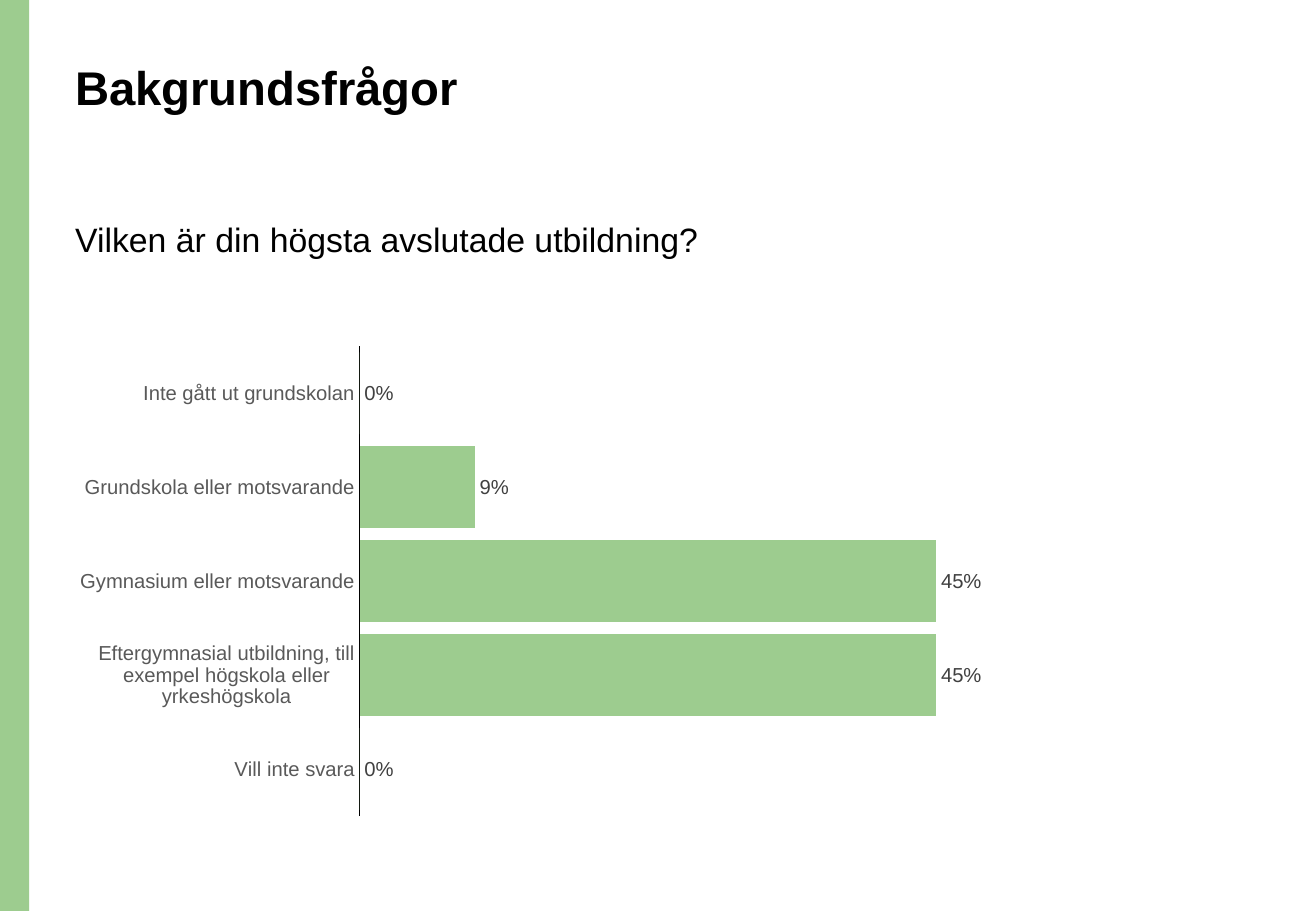
from lxml import etree
from pptx import Presentation
from pptx.chart.data import CategoryChartData
from pptx.dml.color import RGBColor
from pptx.enum.chart import XL_CHART_TYPE, XL_LABEL_POSITION, XL_TICK_MARK
from pptx.enum.shapes import MSO_SHAPE
from pptx.enum.text import MSO_ANCHOR
from pptx.oxml.ns import qn
from pptx.util import Inches, Pt

BAR_CLUSTERED = XL_CHART_TYPE.BAR_CLUSTERED
OUTSIDE_END = XL_LABEL_POSITION.OUTSIDE_END
NO_TICK = XL_TICK_MARK.NONE
RECTANGLE = MSO_SHAPE.RECTANGLE
TOP = MSO_ANCHOR.TOP

GREEN = RGBColor(0x9D, 0xCC, 0x8F)
BLACK = RGBColor(0x00, 0x00, 0x00)
GREY = RGBColor(0x59, 0x59, 0x59)
DARK_GREY = RGBColor(0x40, 0x40, 0x40)

LEFT = 0.52
EDUCATION = {
    "Inte gått ut grundskolan": 0,
    "Grundskola eller motsvarande": 0.09,
    "Gymnasium eller motsvarande": 0.45,
    "Eftergymnasial utbildning, till exempel högskola eller yrkeshögskola": 0.45,
    "Vill inte svara": 0,
}
PLOT_LAYOUT = {"x": 0.31, "y": 0.02, "w": 0.67, "h": 0.96}


class SlideBuilder:
    font_name = "Arial"

    def __init__(self, slide):
        self.s = slide

    def style(self, font, size, color, bold=False):
        font.name = self.font_name
        font.size = Pt(size)
        font.color.rgb = color
        font.bold = bold

    def bar(self, x, y, w, h, color):
        sp = self.s.shapes.add_shape(RECTANGLE, Inches(x), Inches(y), Inches(w), Inches(h))
        sp.shadow.inherit = False
        sp.fill.solid()
        sp.fill.fore_color.rgb = color
        sp.line.fill.background()

    def text(self, x, y, w, h, text, size, bold=False):
        sp = self.s.shapes.add_textbox(Inches(x), Inches(y), Inches(w), Inches(h))
        tf = sp.text_frame
        tf.word_wrap = True
        tf.vertical_anchor = TOP
        tf.text = text
        p = tf.paragraphs[0]
        p.line_spacing = 0.9
        self.style(p.runs[0].font, size, BLACK, bold)

    def bar_chart(self, x, y, w, h, values, maximum):
        data = CategoryChartData(number_format="0%")
        data.categories = list(values)
        data.add_series("Series 1", list(values.values()))
        frame = self.s.shapes.add_chart(
            BAR_CLUSTERED, Inches(x), Inches(y), Inches(w), Inches(h), data)
        chart = frame.chart
        chart.has_legend = False
        chart.has_title = False
        self.style(chart.font, 10, BLACK)

        axis = chart.category_axis
        axis.reverse_order = True
        axis.major_tick_mark = NO_TICK
        axis.minor_tick_mark = NO_TICK
        axis.format.line.color.rgb = BLACK
        axis.format.line.width = Pt(0.75)
        self.style(axis.tick_labels.font, 12, GREY)

        value_axis = chart.value_axis
        value_axis.minimum_scale = 0
        value_axis.maximum_scale = maximum
        value_axis.has_major_gridlines = False
        value_axis.visible = False

        plot = chart.plots[0]
        plot.gap_width = 15
        plot.vary_by_categories = False
        series = plot.series[0]
        series.format.fill.solid()
        series.format.fill.fore_color.rgb = GREEN
        labels = series.data_labels
        labels.show_value = True
        labels.number_format = "0%"
        labels.number_format_is_linked = False
        labels.position = OUTSIDE_END
        self.style(labels.font, 12, DARK_GREY)
        self.place_plot(chart)

    def place_plot(self, chart):
        area = chart._chartSpace.chart.plotArea
        for old in area.findall(qn("c:layout")):
            area.remove(old)
        layout = etree.Element(qn("c:layout"))
        area.insert(0, layout)
        manual = etree.SubElement(layout, qn("c:manualLayout"))
        settings = {"layoutTarget": "inner", "xMode": "edge", "yMode": "edge", **PLOT_LAYOUT}
        for name, value in settings.items():
            etree.SubElement(manual, qn(f"c:{name}")).set("val", str(value))


def main():
    prs = Presentation()
    prs.slide_width = Inches(10.83)
    prs.slide_height = Inches(7.5)
    builder = SlideBuilder(prs.slides.add_slide(prs.slide_layouts[6]))
    builder.bar(0, 0, 0.24, 7.5, GREEN)
    builder.text(LEFT, 0.48, 9.34, 1.02, "Bakgrundsfrågor", 28, bold=True)
    builder.text(LEFT, 1.79, 6.03, 0.74, "Vilken är din högsta avslutade utbildning?", 20)
    builder.bar_chart(LEFT, 2.77, 7.87, 4.03, EDUCATION, 0.5)
    prs.save("out.pptx")


if __name__ == "__main__":
    main()
